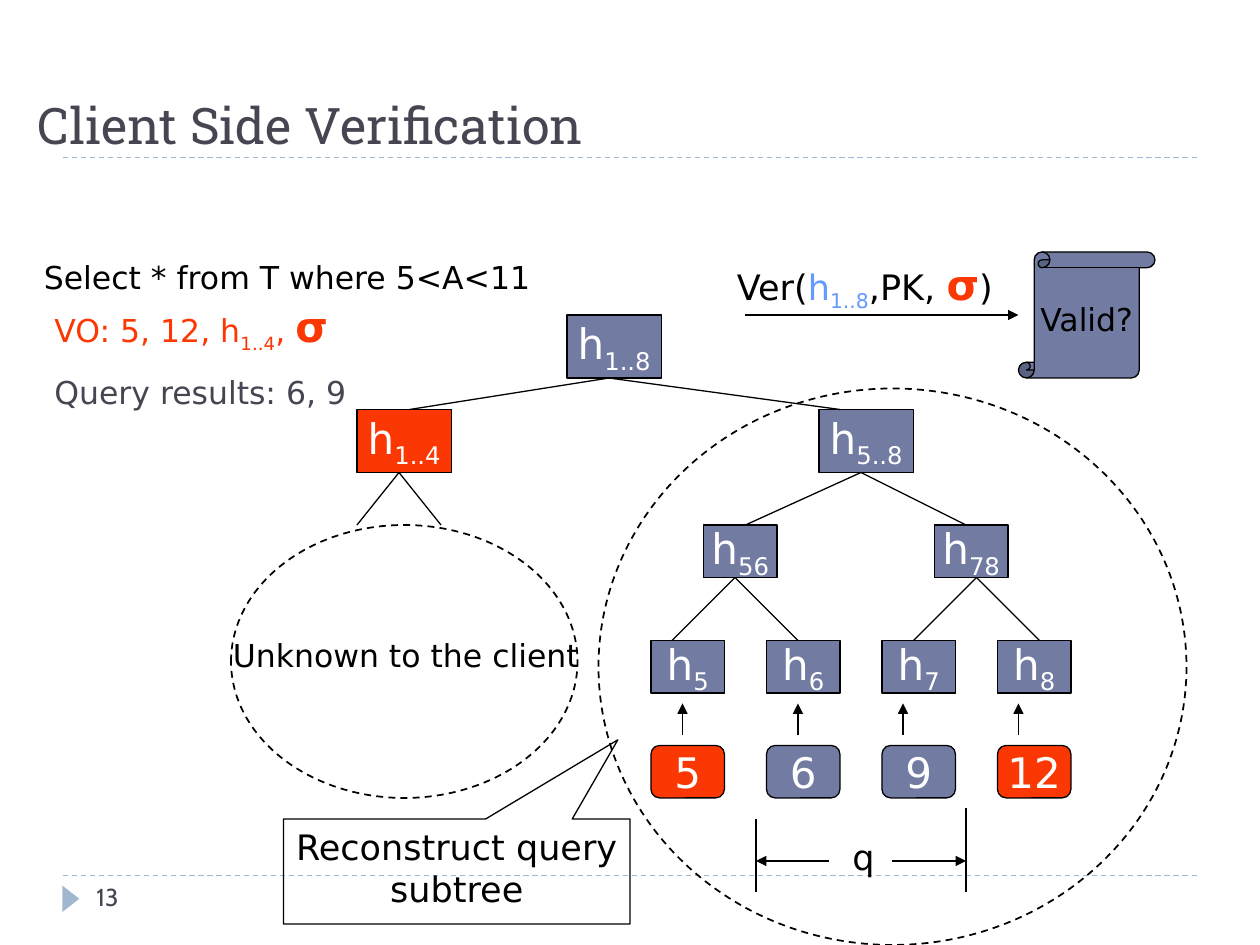
import pptx
import pptx.util
import pptx.oxml
from pptx.dml.color import RGBColor
from pptx.enum.dml import MSO_LINE
from pptx.enum.shapes import MSO_CONNECTOR, MSO_SHAPE
from pptx.enum.text import MSO_ANCHOR, PP_ALIGN
from pptx.oxml.ns import qn


class Theme:
    ink, white, slate = "000000", "FFFFFF", "464653"
    node, alert, accent, sky = "727CA3", "FB3803", "9FB8CD", "6699FF"
    body_font, title_font, number_font = "DejaVu Sans", "Roboto Slab", "Cabin"
    title, node_text, label, body, number = 28.8, 24, 20, 18, 14
    thin, outline = 0.75, 1


def px(n):
    """120 px to the inch."""
    return pptx.util.Emu(n * 7620)


def sub(text, **style):
    return text, dict(style, sub=True)


class Deck:
    def __init__(self, theme):
        self.t = theme
        self.prs = pptx.Presentation()
        self.prs.slide_width, self.prs.slide_height = px(1200), px(900)
        self.s = self.prs.slides.add_slide(self.prs.slide_layouts[6])

    def style_line(self, line, color, width, dash):
        line.color.rgb = RGBColor.from_string(color)
        line.width = pptx.util.Pt(width)
        if dash:
            line.dash_style = MSO_LINE.DASH

    def fill_paragraph(self, p, runs, size, color, font=None, align=None):
        """Each run is a string, or a string with its own style."""
        p.font.name = font or self.t.body_font
        p.font.size = pptx.util.Pt(size)
        p.font.color.rgb = RGBColor.from_string(color)
        if align is not None:
            p.alignment = align
        for run in runs:
            text, style = (run, {}) if isinstance(run, str) else run
            r = p.add_run()
            r.text = text
            if "size" in style:
                r.font.size = pptx.util.Pt(style["size"])
            if "color" in style:
                r.font.color.rgb = RGBColor.from_string(style["color"])
            if "bold" in style:
                r.font.bold = style["bold"]
            if "sub" in style:
                r._r.get_or_add_rPr().set("baseline", "-25000")

    def text(self, box, runs, size, color, font=None, wrap=True,
             anchor=MSO_ANCHOR.TOP):
        tf = self.s.shapes.add_textbox(*map(px, box)).text_frame
        tf.word_wrap = wrap
        tf.vertical_anchor = anchor
        self.fill_paragraph(tf.paragraphs[0], runs, size, color, font)
        return tf

    def shape(self, kind, box, fill=None, line=Theme.ink, width=Theme.thin,
              dash=False, adjust=()):
        sp = self.s.shapes.add_shape(kind, *map(px, box))
        sp.shadow.inherit = False
        if fill:
            sp.fill.solid()
            sp.fill.fore_color.rgb = RGBColor.from_string(fill)
        else:
            sp.fill.background()
        if line:
            self.style_line(sp.line, line, width, dash)
        else:
            sp.line.fill.background()
        for i, value in enumerate(adjust):
            sp.adjustments[i] = value
        return sp

    def label(self, sp, runs, size, color, wrap=False,
              anchor=MSO_ANCHOR.MIDDLE):
        tf = sp.text_frame
        tf.word_wrap = wrap
        tf.vertical_anchor = anchor
        self.fill_paragraph(tf.paragraphs[0], runs, size, color,
                            align=PP_ALIGN.CENTER)

    def node(self, box, runs, fill=Theme.node, kind=MSO_SHAPE.RECTANGLE):
        self.label(self.shape(kind, box, fill), runs, self.t.node_text,
                   self.t.white)

    def line(self, x1, y1, x2, y2, color=Theme.ink, dash=False, arrow=False):
        c = self.s.shapes.add_connector(MSO_CONNECTOR.STRAIGHT,
                                        px(x1), px(y1), px(x2), px(y2))
        self.style_line(c.line, color, self.t.thin, dash)
        sppr = c._element.spPr
        if arrow:
            ln = sppr.find(qn("a:ln"))
            ln.append(ln.makeelement(qn("a:tailEnd"), {"type": "triangle"}))
        sppr.append(sppr.makeelement(qn("a:effectLst"), {}))

    def fork(self, x, y, left, right, bottom):
        for end in (left, right):
            self.line(x, y, end, bottom)


def main():
    t = Theme
    d = Deck(t)

    # Frame: rules, title, slide number
    for y in (834, 150):
        d.line(60, y, 1140, y, t.accent, dash=True)
    marker = d.shape(MSO_SHAPE.ISOSCELES_TRIANGLE, (55, 848, 25, 16), t.accent,
                     line=None)
    marker.rotation = 90
    d.text((24, 118, 1082, 35), ["Client Side Verification"], t.title, t.slate,
           t.title_font, anchor=MSO_ANCHOR.BOTTOM)
    d.text((80, 834, 260, 48), ["13"], t.number, t.slate, t.number_font)

    # Leaves: values, their hashes and arrows
    leaves = [("5", "5", t.alert, 650), ("6", "6", t.node, 760),
              ("9", "7", t.node, 860), ("12", "8", t.alert, 970)]
    for i, (value, index, fill, arrow_x) in enumerate(leaves):
        x = 620 + 110 * i
        d.node((x, 710, 70, 50), [value], fill,
               MSO_SHAPE.FLOWCHART_ALTERNATE_PROCESS)
        d.node((x, 610, 70, 50), ["h", sub(index)])
        d.line(arrow_x, 700, arrow_x, 670, arrow=True)

    # Inner nodes
    for box, index, fill in [((670, 500, 70, 50), "56", t.node),
                             ((890, 500, 70, 50), "78", t.node),
                             ((340, 390, 90, 60), "1..4", t.alert),
                             ((780, 390, 90, 60), "5..8", t.node),
                             ((540, 300, 90, 60), "1..8", t.node)]:
        d.node(box, ["h", sub(index)], fill)

    # Branches
    for branch in [(700, 550, 640, 760, 610), (930, 550, 870, 990, 610),
                   (820, 450, 710, 920, 500), (580, 360, 390, 800, 390),
                   (380, 450, 340, 420, 500)]:
        d.fork(*branch)

    # Signature check
    scroll = d.shape(MSO_SHAPE.VERTICAL_SCROLL, (970, 240, 130, 120), t.node,
                     adjust=[0.125])
    d.label(scroll, ["Valid?"], t.body, t.ink)
    sigma = ("σ", {"size": t.node_text, "color": t.alert, "bold": True})
    d.text((690, 240, 280, 60),
           ["Ver(", ("h", {"color": t.sky}), sub("1..8", color=t.sky),
            ",PK, ", sigma, ")"], t.label, t.ink)
    d.line(710, 300, 970, 300, arrow=True)

    # Query range
    d.line(720, 780, 720, 850)
    d.line(920, 770, 920, 850)
    d.line(850, 820, 920, 820, arrow=True)
    d.line(790, 820, 720, 820, arrow=True)
    d.text((800, 790, 50, 52), ["q"], t.label, t.ink)

    # Query and verification object
    d.text((30, 240, 520, 48), ["Select * from T where 5<A<11"], t.body, t.ink)
    tf = d.text((40, 280, 340, 114),
                ["VO: 5, 12, h", sub("1..4"), ", ", sigma], t.body, t.alert)
    p = tf.add_paragraph()
    p.space_before = pptx.util.Pt(11)
    d.fill_paragraph(p, ["Query results: 6, 9"], t.body, t.slate)

    # Unknown and reconstructed subtrees
    for box in [(220, 500, 330, 260), (570, 370, 560, 530)]:
        d.shape(MSO_SHAPE.OVAL, box, width=t.outline, dash=True)
    d.text((210, 600, 355, 48), ["Unknown to the client"], t.body, t.ink,
           wrap=False)
    callout = d.shape(MSO_SHAPE.RECTANGULAR_CALLOUT, (270, 780, 330, 100),
                      adjust=[0.465, -1.254])
    d.label(callout, ["Reconstruct query subtree"], t.label, t.ink, wrap=True,
            anchor=MSO_ANCHOR.TOP)

    d.prs.save("out.pptx")


if __name__ == "__main__":
    main()
